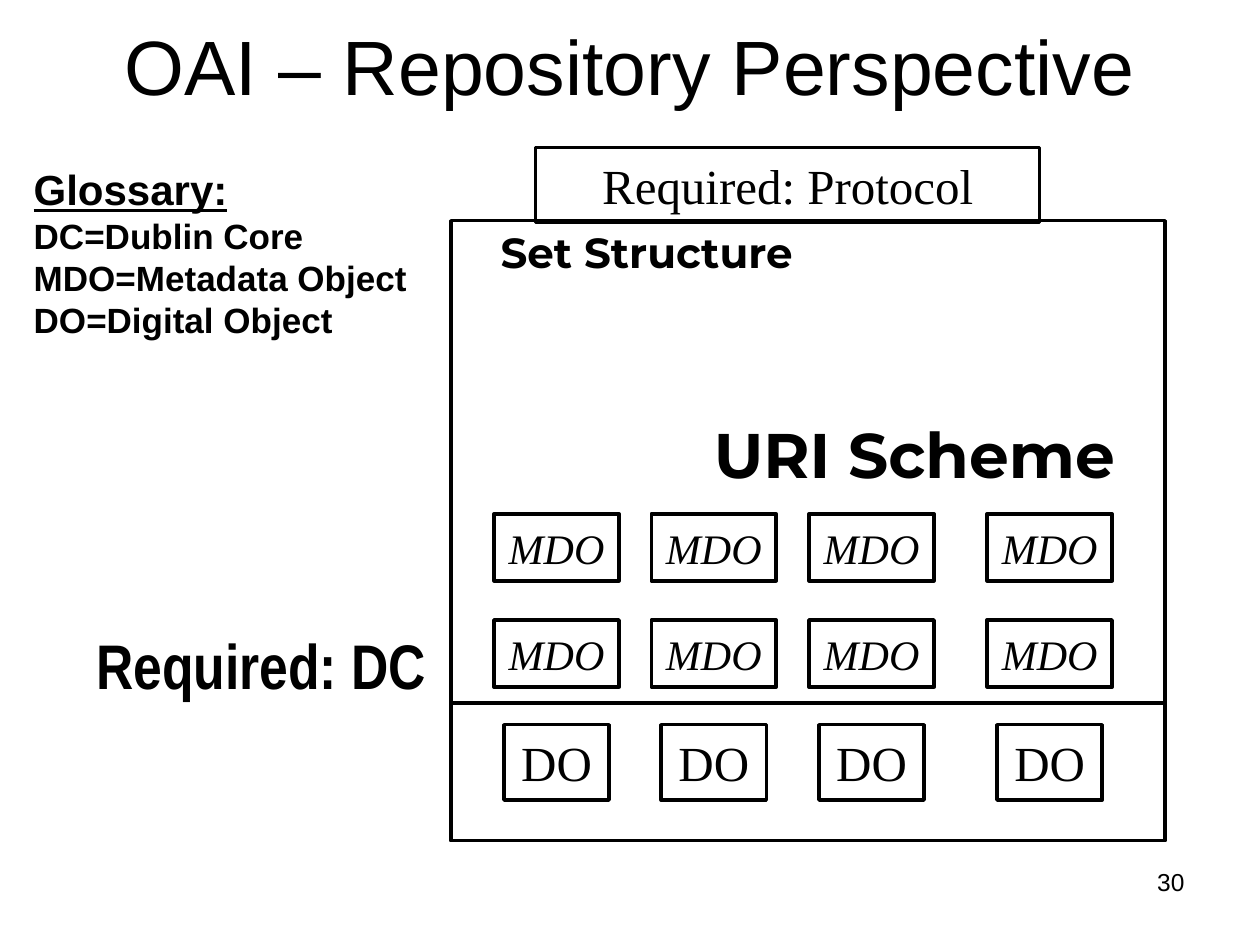
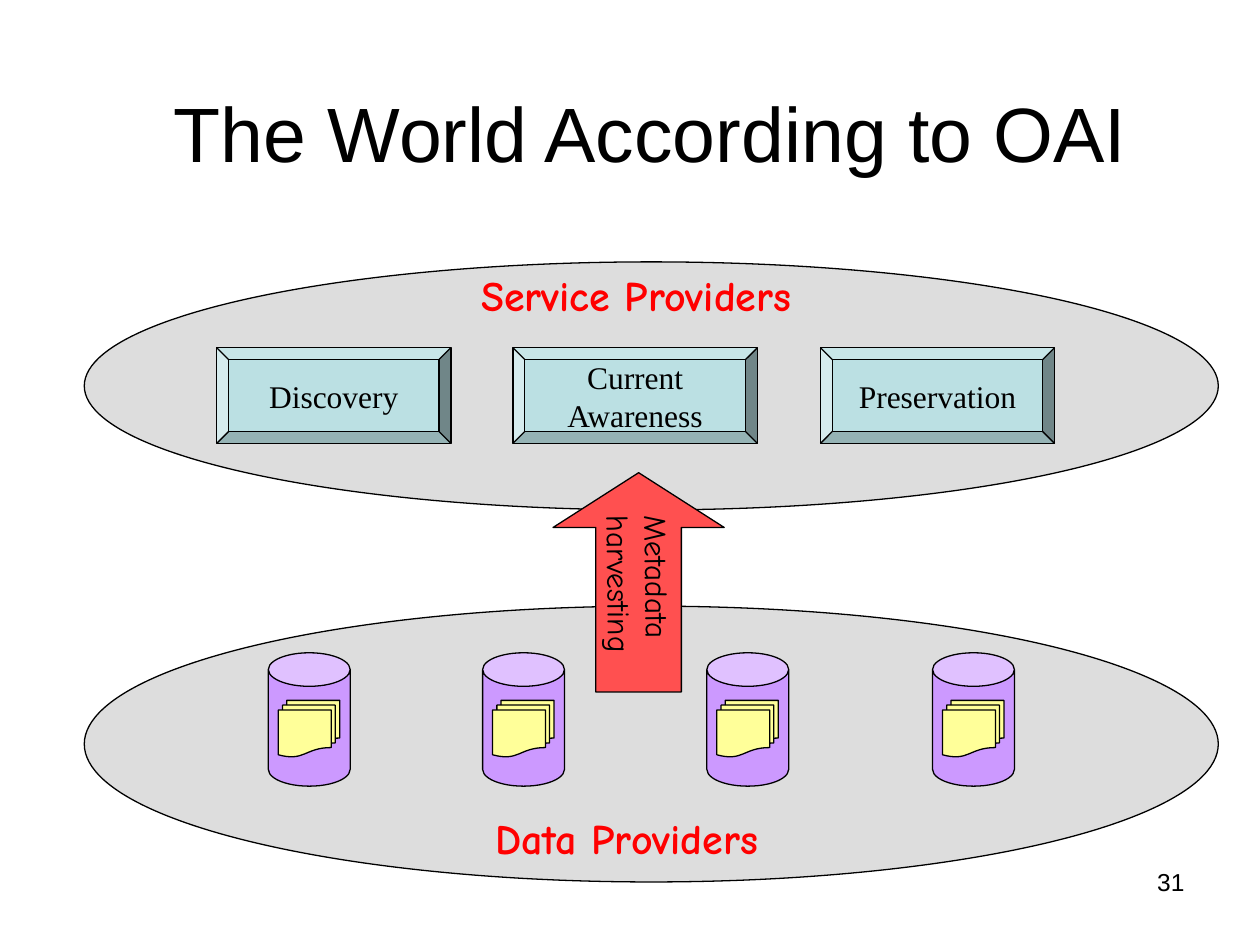
from dataclasses import dataclass
from typing import Optional

from lxml.etree import SubElement
from pptx import Presentation
from pptx.dml.color import RGBColor
from pptx.enum.shapes import MSO_CONNECTOR as Link, MSO_SHAPE as Form
from pptx.enum.text import MSO_ANCHOR as Anchor, MSO_AUTO_SIZE as Fit, PP_ALIGN as Align
from pptx.oxml.ns import qn
from pptx.util import Cm, Pt

COLOURS = {
    "ink": "000000",
    "cloud": "DDDDDD",
    "database": "CC99FF",
    "document": "FFFF99",
    "service": "BBE0E3",
    "arrow": "FF5050",
    "provider": "FF0000",
}
TITLE_ONLY = 5


@dataclass(frozen=True)
class Area:
    left: float
    top: float
    width: float
    height: float

    def lengths(self) -> tuple:
        return Cm(self.left), Cm(self.top), Cm(self.width), Cm(self.height)


@dataclass(frozen=True)
class Style:
    font: str
    size: float
    bold: bool = False
    italic: bool = False
    colour: str = "ink"
    align: Align = Align.CENTER


@dataclass(frozen=True)
class Look:
    form: Form
    fill: Optional[str] = None
    line: float = 0.75
    adjustments: tuple = ()


@dataclass(frozen=True)
class Label:
    text: str
    area: Area
    style: Style


TITLE = Style("Arial", 44)
NUMBER = Style("Arial", 14, align=Align.RIGHT)
REQUIRED = Style("Times New Roman", 28)
METADATA = Style("Times New Roman", 24, italic=True)
SERVICE = Style("Times New Roman", 18)
PROVIDER = Style("Comic Neue", 24, bold=True, colour="provider", align=Align.LEFT)
HARVEST = Style("Comic Neue", 18, align=Align.LEFT)
GLOSSARY = Style("Arial", 20, bold=True, align=Align.LEFT)

FRAME = Look(Form.RECTANGLE, line=2)
CLOUD = Look(Form.OVAL, "cloud")
DATABASE = Look(Form.CAN, "database", adjustments=(0.41,))
DOCUMENTS = Look(Form.FLOWCHART_MULTIDOCUMENT, "document")
BEVEL = Look(Form.BEVEL, "service", adjustments=(0.125,))
UP_ARROW = Look(Form.UP_ARROW, "arrow", adjustments=(0.5, 0.32))


def colour(name: str) -> RGBColor:
    return RGBColor.from_string(COLOURS[name])


def write(frame, text: str, style: Style) -> None:
    frame.auto_size = Fit.NONE
    frame.text = text
    for para in frame.paragraphs:
        para.alignment = style.align
        font = para.font
        font.name, font.size = style.font, Pt(style.size)
        font.bold, font.italic = style.bold, style.italic
        font.color.rgb = colour(style.colour)


def add_label(shapes, label: Label, wrap: bool = False):
    box = shapes.add_textbox(*label.area.lengths())
    write(box.text_frame, label.text, label.style)
    box.text_frame.word_wrap = wrap
    return box


def add_figure(shapes, look: Look, area: Area, text: str = "", style: Style = REQUIRED):
    figure = shapes.add_shape(look.form, *area.lengths())
    figure.shadow.inherit = False
    if look.fill:
        figure.fill.solid()
        figure.fill.fore_color.rgb = colour(look.fill)
    else:
        figure.fill.background()
    figure.line.color.rgb = colour("ink")
    figure.line.width = Pt(look.line)
    for index, value in enumerate(look.adjustments):
        figure.adjustments[index] = value
    if text:
        write(figure.text_frame, text, style)
        figure.text_frame.word_wrap = False
        figure.text_frame.vertical_anchor = Anchor.MIDDLE
    return figure


def add_divider(shapes, left: float, right: float, top: float) -> None:
    divider = shapes.add_connector(Link.STRAIGHT, Cm(left), Cm(top), Cm(right), Cm(top))
    divider.line.color.rgb = colour("ink")
    divider.line.width = Pt(2)
    SubElement(divider.element.spPr, qn("a:effectLst"))


def add_page(deck, title: str, area: Area, number: int):
    page = deck.slides.add_slide(deck.slide_layouts[TITLE_ONLY])
    heading = page.shapes.title
    heading.left, heading.top, heading.width, heading.height = area.lengths()
    write(heading.text_frame, title, TITLE)
    heading.text_frame.vertical_anchor = Anchor.MIDDLE
    add_label(page.shapes, Label(str(number), Area(18.21, 17.35, 5.92, 1.32), NUMBER), wrap=True)
    return page


def build_repository(deck) -> None:
    page = add_page(deck, "OAI – Repository Perspective", Area(1.91, 0.43, 21.59, 1.75), 30)
    shapes = page.shapes
    repository = Area(9.09, 4.45, 14.4, 12.5)
    add_figure(shapes, FRAME, repository)
    add_figure(shapes, FRAME, Area(10.8, 2.97, 10.16, 1.52), "Required: Protocol")

    for centre in (11.22, 14.39, 17.57, 21.16):
        add_figure(shapes, FRAME, Area(centre - 1.06, 14.61, 2.12, 1.52), "DO")
        for top in (10.36, 12.5):
            add_figure(shapes, FRAME, Area(centre - 1.26, top, 2.52, 1.35), "MDO", METADATA)

    add_divider(shapes, repository.left, repository.left + repository.width, 14.17)
    for label in (
        Label("Set Structure", Area(9.96, 4.45, 6.15, 5.36), Style("Montserrat", 24, bold=True)),
        Label("URI Scheme", Area(14.17, 8.26, 8.53, 1.8), Style("Montserrat", 36, bold=True)),
        Label("Required: DC", Area(1.91, 12.5, 6.71, 1.57), Style("Arial Narrow", 36, bold=True)),
    ):
        add_label(shapes, label)

    terms = "Glossary:\nDC=Dublin Core\nMDO=Metadata Object\nDO=Digital Object"
    glossary = add_label(shapes, Label(terms, Area(0.43, 3.18, 8.08, 3.84), GLOSSARY))
    heading = glossary.text_frame.paragraphs[0].font
    heading.size, heading.underline = Pt(24), True


def build_world(deck) -> None:
    page = add_page(deck, "The World According to OAI", Area(1.48, 1.06, 23.28, 3.18), 31)
    shapes = page.shapes
    add_figure(shapes, CLOUD, Area(1.7, 12.22, 22.86, 5.56))
    add_figure(shapes, CLOUD, Area(1.7, 5.28, 22.86, 5))

    for left in (5.41, 9.73, 14.25, 18.8):
        add_figure(shapes, DATABASE, Area(left, 13.16, 1.65, 2.69))
        add_figure(shapes, DOCUMENTS, Area(left + 0.2, 14.12, 1.24, 1.14))

    for service, left, width in (
        ("Discovery", 4.37, 4.72),
        ("Current\nAwareness", 10.34, 4.93),
        ("Preservation", 16.54, 4.72),
    ):
        add_figure(shapes, BEVEL, Area(left, 7.01, width, 1.93), service, SERVICE)

    add_label(shapes, Label("Service Providers", Area(9.45, 5.31, 7.72, 1.24), PROVIDER))
    add_label(shapes, Label("Data Providers", Area(9.73, 16.26, 6.63, 1.27), PROVIDER))

    harvesting = shapes.add_group_shape().shapes
    add_figure(harvesting, UP_ARROW, Area(11.15, 9.53, 3.45, 4.42))
    caption = Label("Metadata\nharvesting", Area(11.07, 11.05, 3.61, 1.78), HARVEST)
    add_label(harvesting, caption).rotation = 89.3


def main() -> None:
    deck = Presentation()
    deck.slide_width, deck.slide_height = Cm(25.4), Cm(19.05)
    build_repository(deck)
    build_world(deck)
    deck.save("out.pptx")


if __name__ == "__main__":
    main()
